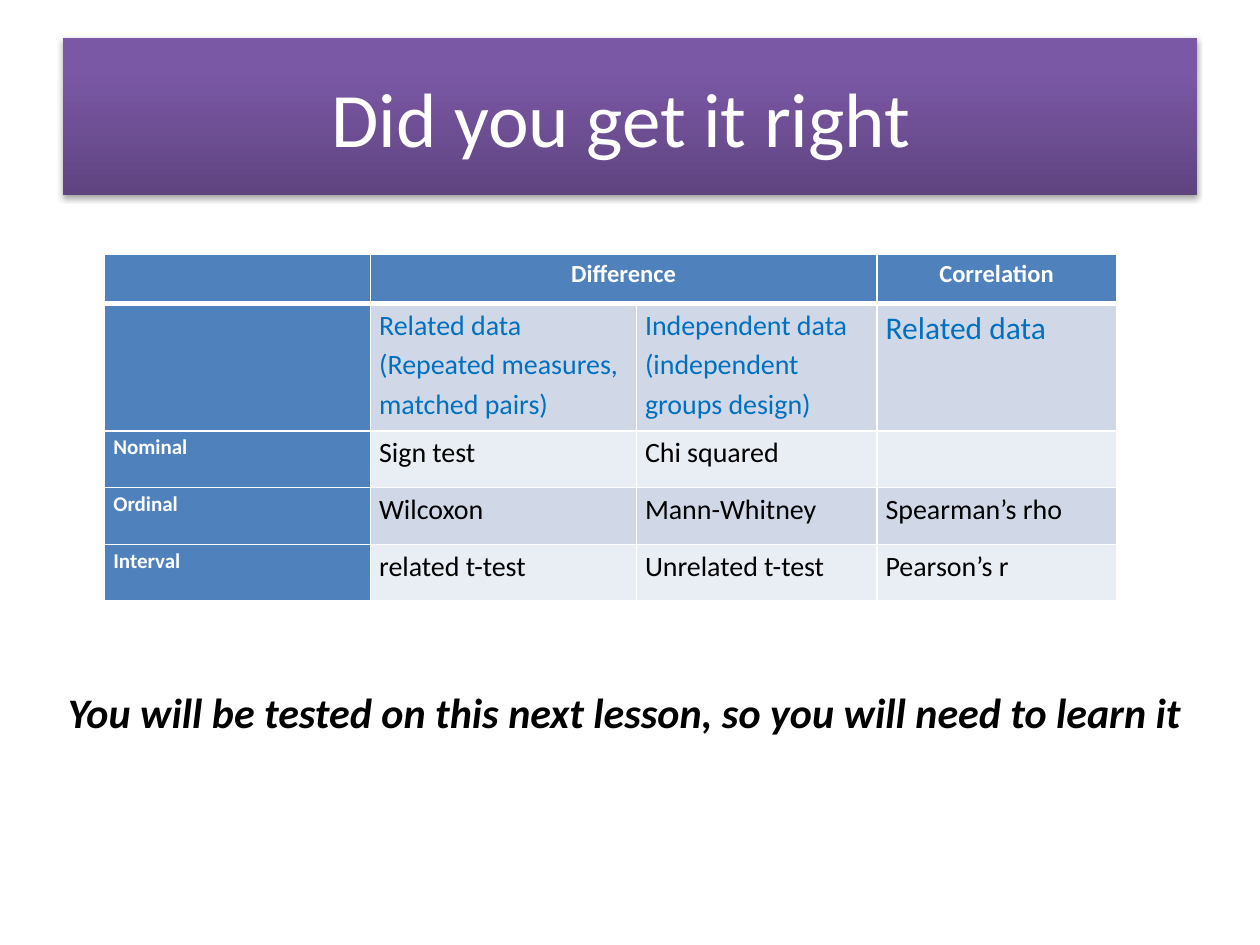
"""Builds a slide with a table for choosing a statistical test."""
from pptx import Presentation
from pptx.dml.color import RGBColor
from pptx.enum.text import MSO_ANCHOR as Anchor, MSO_AUTO_SIZE as AutoSize, PP_ALIGN as Align
from pptx.oxml import parse_xml
from pptx.oxml.ns import nsdecls
from pptx.util import Inches, Pt

TITLE = "Did you get it right "
REMINDER = "You will be tested on this next lesson, so you will need to learn it"
ROWS = [
    ["", "Difference", "", "Correlation"],
    ["", "Related data (Repeated measures, matched pairs)",
     "Independent data (independent groups design)", "Related data"],
    ["Nominal", "Sign test", "Chi squared", ""],
    ["Ordinal", "Wilcoxon", "Mann-Whitney", "Spearman’s rho"],
    ["Interval", "related t-test", "Unrelated t-test", "Pearson’s r"],
]
COLUMN_WIDTHS = [2.11, 2.11, 1.91, 1.9]
ROW_HEIGHTS = [0.39, 1.01, 0.45, 0.45, 0.45]
GRADIENT = [(0, "5F4480"), (80, "7B58A6"), (100, "7C57A8")]
WHITE, BLACK, BLUE, TEXT_BLUE = "FFFFFF", "000000", "4F81BD", "0070C0"
BANDS = ["E9EDF4", "D0D8E8"]


def rgb(color):
    return RGBColor.from_string(color)


def set_font(paragraph, size, color, bold=False, italic=False):
    font = paragraph.font
    font.name, font.size, font.bold, font.italic = "Calibri", Pt(size), bold, italic
    font.color.rgb = rgb(color)


def cell_style(row, column):
    """Return fill, text size, text colour and boldness for a cell."""
    if row == 0 or column == 0:
        return BLUE, 14 if row == 0 else 12, WHITE, True
    size = 18 if (row, column) == (1, 3) else 16
    return BANDS[row % 2], size, TEXT_BLUE if row == 1 else BLACK, False


def add_borders(cell, row):
    widths = {"L": 1, "R": 1, "T": 3 if row == 1 else 1, "B": 3 if row == 0 else 1}
    properties = cell._tc.get_or_add_tcPr()
    for side, width in widths.items():
        properties.append(parse_xml(
            f'<a:ln{side} {nsdecls("a")} w="{Pt(width)}"><a:solidFill>'
            f'<a:srgbClr val="{WHITE}"/></a:solidFill></a:ln{side}>'))


def add_title(slide):
    title = slide.shapes.title
    title.left, title.top, title.width, title.height = map(Inches, (0.5, 0.3, 9, 1.25))
    stops = "".join(f'<a:gs pos="{position * 1000}"><a:srgbClr val="{color}"/></a:gs>'
                    for position, color in GRADIENT)
    properties = title._element.spPr
    properties.append(parse_xml(
        f'<a:gradFill {nsdecls("a")} rotWithShape="1"><a:gsLst>{stops}</a:gsLst>'
        '<a:lin ang="16200000" scaled="0"/></a:gradFill>'))
    properties.append(parse_xml(
        f'<a:effectLst {nsdecls("a")}><a:outerShdw blurRad="{Pt(3.1)}" dist="{Pt(1.8)}" '
        f'dir="5400000" rotWithShape="0"><a:srgbClr val="{BLACK}"><a:alpha val="35000"/>'
        '</a:srgbClr></a:outerShdw></a:effectLst>'))
    title.text_frame.text = TITLE
    title.text_frame.vertical_anchor = Anchor.MIDDLE
    paragraph = title.text_frame.paragraphs[0]
    paragraph.alignment = Align.CENTER
    set_font(paragraph, 44, WHITE)


def add_test_table(slide):
    table = slide.shapes.add_table(
        len(ROWS), len(COLUMN_WIDTHS), Inches(0.83), Inches(2.02),
        Inches(sum(COLUMN_WIDTHS)), Inches(sum(ROW_HEIGHTS))).table
    for column, width in zip(table.columns, COLUMN_WIDTHS):
        column.width = Inches(width)
    for row, height in zip(table.rows, ROW_HEIGHTS):
        row.height = Inches(height)
    for row, texts in enumerate(ROWS):
        for column, text in enumerate(texts):
            cell = table.cell(row, column)
            fill, size, color, bold = cell_style(row, column)
            add_borders(cell, row)
            cell.fill.solid()
            cell.fill.fore_color.rgb = rgb(fill)
            cell.margin_left = cell.margin_right = Inches(0.07)
            cell.margin_top = cell.margin_bottom = 0
            cell.text = text
            paragraph = cell.text_frame.paragraphs[0]
            paragraph.alignment = Align.CENTER if row == 0 else Align.LEFT
            paragraph.line_spacing = 1.15
            set_font(paragraph, size, color, bold)
    table.cell(0, 1).merge(table.cell(0, 2))


def add_reminder(slide):
    box = slide.shapes.add_textbox(*map(Inches, (0.44, 5.4, 9.06, 0.5)))
    frame = box.text_frame
    frame.word_wrap = True
    frame.auto_size = AutoSize.SHAPE_TO_FIT_TEXT
    frame.text = REMINDER
    set_font(frame.paragraphs[0], 24, BLACK, bold=True, italic=True)


def main():
    presentation = Presentation()
    presentation.slide_width, presentation.slide_height = Inches(10), Inches(7.5)
    slide = presentation.slides.add_slide(presentation.slide_layouts[5])
    add_title(slide)
    add_test_table(slide)
    add_reminder(slide)
    presentation.save("out.pptx")


if __name__ == "__main__":
    main()
